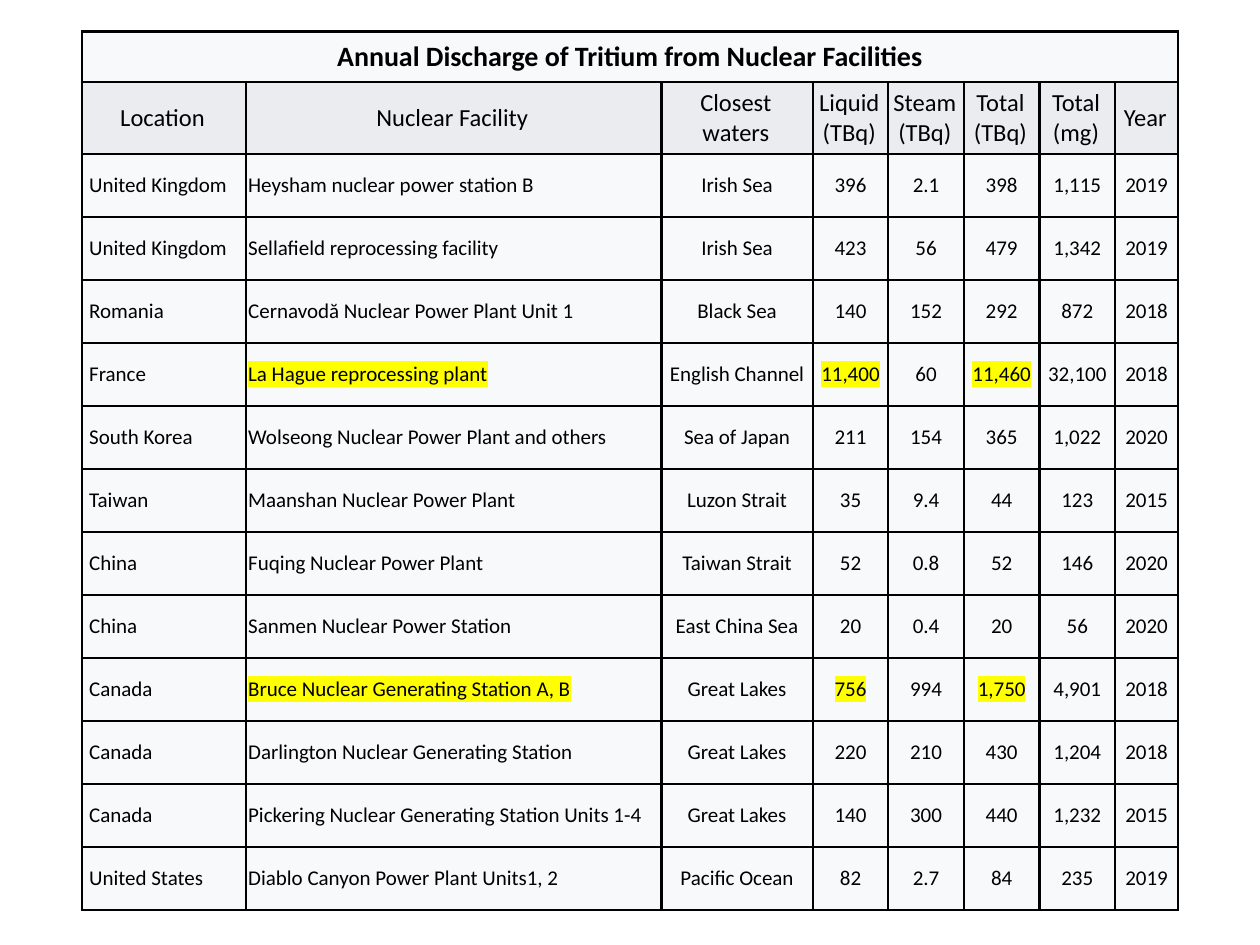
from lxml.etree import SubElement as Sub
from pptx import Presentation
from pptx.dml.color import RGBColor as RGB
from pptx.enum.text import MSO_ANCHOR as Anchor, PP_ALIGN as Align
from pptx.oxml.ns import qn
from pptx.util import Pt

TITLE = "Annual Discharge of Tritium from Nuclear Facilities"
HEADS = ["Location", "Nuclear Facility", "Closest\vwaters", "Liquid\v(TBq)",
         "Steam\v(TBq)", "Total\v(TBq)", "Total\v(mg)", "Year"]
ROWS = [
    ["United Kingdom", "Heysham nuclear power station B", "Irish Sea", "396", "2.1", "398", "1,115", "2019"],
    ["United Kingdom", "Sellafield reprocessing facility", "Irish Sea", "423", "56", "479", "1,342", "2019"],
    ["Romania", "Cernavodă Nuclear Power Plant Unit 1", "Black Sea", "140", "152", "292", "872", "2018"],
    ["France", "La Hague reprocessing plant", "English Channel", "11,400", "60", "11,460", "32,100", "2018"],
    ["South Korea", "Wolseong Nuclear Power Plant and others", "Sea of Japan", "211", "154", "365", "1,022", "2020"],
    ["Taiwan", "Maanshan Nuclear Power Plant", "Luzon Strait", "35", "9.4", "44", "123", "2015"],
    ["China", "Fuqing Nuclear Power Plant", "Taiwan Strait", "52", "0.8", "52", "146", "2020"],
    ["China", "Sanmen Nuclear Power Station", "East China Sea", "20", "0.4", "20", "56", "2020"],
    ["Canada", "Bruce Nuclear Generating Station A, B", "Great Lakes", "756", "994", "1,750", "4,901", "2018"],
    ["Canada", "Darlington Nuclear Generating Station", "Great Lakes", "220", "210", "430", "1,204", "2018"],
    ["Canada", "Pickering Nuclear Generating Station Units 1-4", "Great Lakes", "140", "300", "440", "1,232", "2015"],
    ["United States", "Diablo Canyon Power Plant Units1, 2", "Pacific Ocean", "82", "2.7", "84", "235", "2019"],
]
WIDTHS = [93.6, 237.6, 86.4] + [43.2] * 4 + [36]
HEIGHTS = [28.8, 41.04] + [36] * len(ROWS)
MARKED = {"La Hague reprocessing plant", "Bruce Nuclear Generating Station A, B"}
MARK_COLS = {1, 3, 5}
INK, PALE, GREY, YELLOW = "000000", "F8F9FA", "EAECF0", "FFFF00"


def color(code):
    return RGB.from_string(code)


def edge(cell):
    props = cell._tc.get_or_add_tcPr()
    for side in ("a:lnL", "a:lnR", "a:lnT", "a:lnB"):
        line = Sub(props, qn(side), w=str(Pt(1.5)))
        Sub(Sub(line, qn("a:solidFill")), qn("a:srgbClr"), val=INK)


def paint(cell, code):
    edge(cell)
    cell.fill.solid()
    cell.fill.fore_color.rgb = color(code)


def mark(para):
    for run in para.runs:
        tint = Sub(run._r.get_or_add_rPr(), qn("a:highlight"))
        Sub(tint, qn("a:srgbClr"), val=YELLOW)


def write(cell, text, size, align=Align.CENTER, bold=False, left=1.44, right=1.44):
    cell.vertical_anchor = Anchor.MIDDLE
    cell.margin_left, cell.margin_right = Pt(left), Pt(right)
    cell.margin_top = cell.margin_bottom = Pt(0.72)
    para = cell.text_frame.paragraphs[0]
    para.text = text
    para.alignment = align
    font = para.font
    font.name, font.size, font.bold = "Calibri", Pt(size), bold
    font.color.rgb = color(INK)
    return para


def make_grid(slide):
    frame = slide.shapes.add_table(len(HEIGHTS), len(WIDTHS), Pt(46.8), Pt(18),
                                   Pt(sum(WIDTHS)), Pt(sum(HEIGHTS)))
    grid = frame.table
    grid.first_row = grid.horz_banding = False
    for col, width in zip(grid.columns, WIDTHS):
        col.width = Pt(width)
    for row, height in zip(grid.rows, HEIGHTS):
        row.height = Pt(height)
    return grid


def fill_title(grid):
    for cell in grid.rows[0].cells:
        paint(cell, PALE)
    grid.cell(0, 0).merge(grid.cell(0, len(WIDTHS) - 1))
    write(grid.cell(0, 0), TITLE, 16, bold=True)


def fill_heads(grid):
    for cell, text in zip(grid.rows[1].cells, HEADS):
        paint(cell, GREY)
        write(cell, text, 14, right=2.88)


def fill_row(cells, texts):
    for col, (cell, text) in enumerate(zip(cells, texts)):
        paint(cell, PALE)
        align = Align.LEFT if col < 2 else Align.CENTER
        para = write(cell, text, 12, align, left=4.15 if col == 0 else 1.44)
        if texts[1] in MARKED and col in MARK_COLS:
            mark(para)


def main():
    deck = Presentation()
    deck.slide_width, deck.slide_height = Pt(720), Pt(540)
    slide = deck.slides.add_slide(deck.slide_layouts[6])
    grid = make_grid(slide)
    fill_title(grid)
    fill_heads(grid)
    for num, texts in enumerate(ROWS, 2):
        fill_row(grid.rows[num].cells, texts)
    deck.save("out.pptx")


if __name__ == "__main__":
    main()
